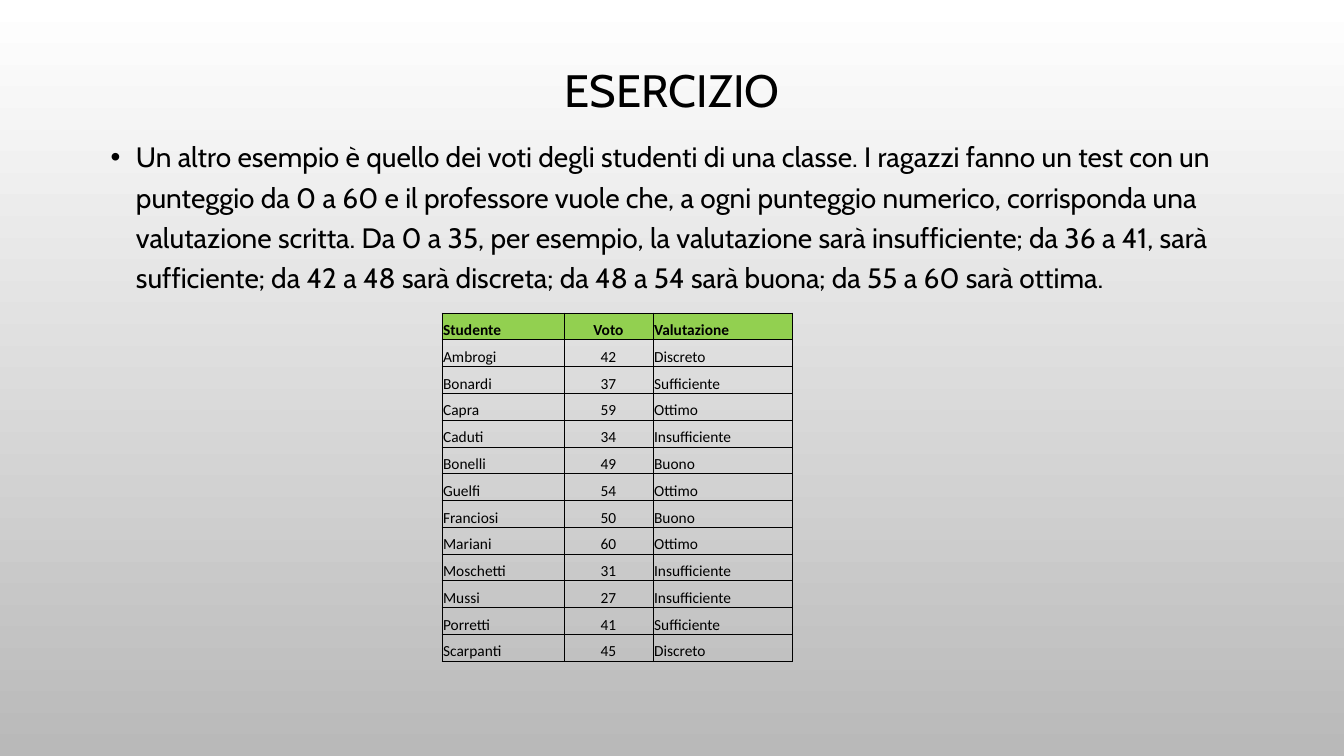
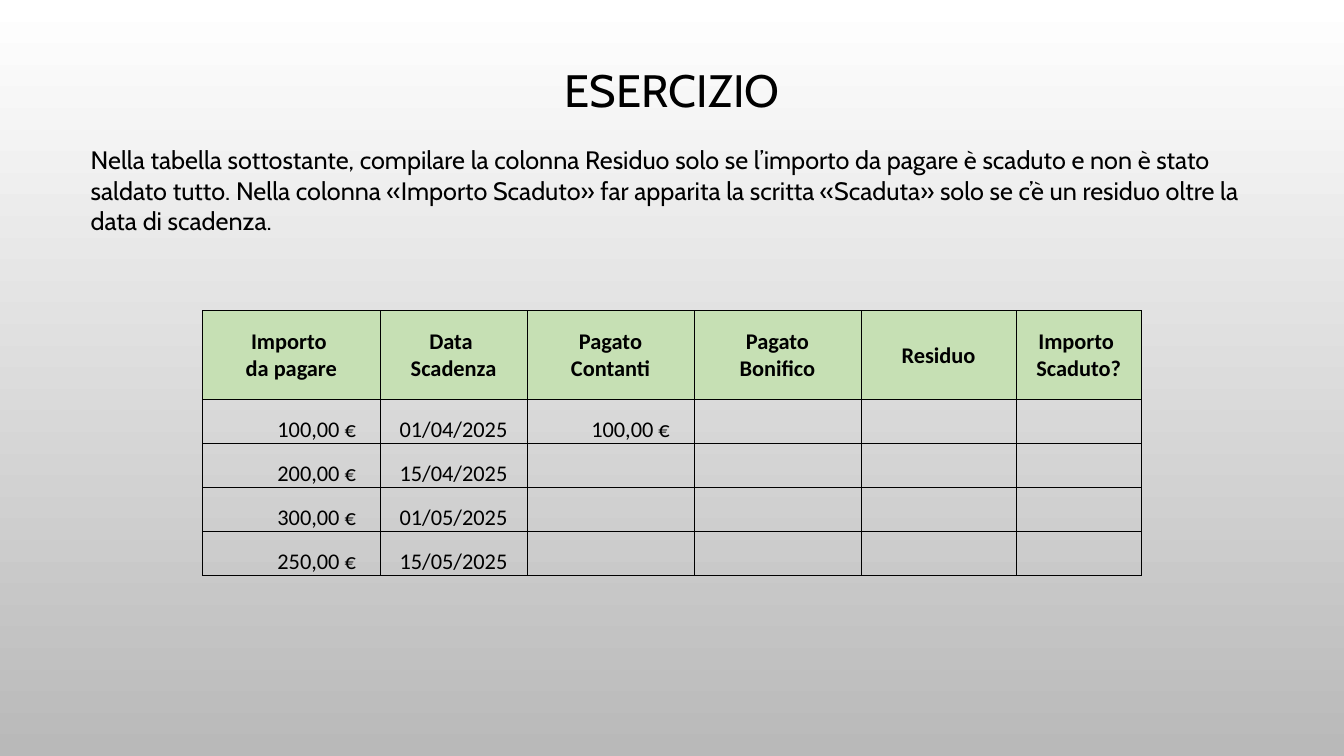
from dataclasses import dataclass

from lxml.etree import SubElement
from pptx import Presentation
from pptx.dml.color import RGBColor
from pptx.enum.text import MSO_ANCHOR as Anchor, PP_ALIGN as Align
from pptx.oxml.ns import qn
from pptx.util import Pt

EMU_PER_PX = 9525


@dataclass(frozen=True)
class Theme:
    text: str = "000000"
    page_top: str = "FFFFFF"
    page_bottom: str = "B9B9B9"
    grades_header: str = "92D050"
    payments_header: str = "C6E0B4"
    text_font: str = "Cabin"
    table_font: str = "Calibri"
    title_size: float = 32.4
    bullet_size: int = 20
    body_size: int = 18
    grades_size: int = 11
    payments_size: int = 16
    border_width: float = 0.5


THEME = Theme()


@dataclass(frozen=True)
class Column:
    width: int
    align: Align = Align.LEFT
    right_inset: int = 1


# Content
BULLET = (
    "Un altro esempio è quello dei voti degli studenti di una classe. "
    "I ragazzi fanno un test con un punteggio da 0 a 60 e il professore vuole che, "
    "a ogni punteggio numerico, corrisponda una valutazione scritta. "
    "Da 0 a 35, per esempio, la valutazione sarà insufficiente; "
    "da 36 a 41, sarà sufficiente; da 42 a 48 sarà discreta; "
    "da 48 a 54 sarà buona; da 55 a 60 sarà ottima."
)
GRADES = [
    ("Studente", "Voto", "Valutazione"),
    ("Ambrogi", "42", "Discreto"),
    ("Bonardi", "37", "Sufficiente"),
    ("Capra", "59", "Ottimo"),
    ("Caduti", "34", "Insufficiente"),
    ("Bonelli", "49", "Buono"),
    ("Guelfi", "54", "Ottimo"),
    ("Franciosi", "50", "Buono"),
    ("Mariani", "60", "Ottimo"),
    ("Moschetti", "31", "Insufficiente"),
    ("Mussi", "27", "Insufficiente"),
    ("Porretti", "41", "Sufficiente"),
    ("Scarpanti", "45", "Discreto"),
]
GRADE_COLUMNS = [Column(116), Column(85, Align.CENTER), Column(133)]

INSTRUCTIONS = (
    "Nella tabella sottostante, compilare la colonna Residuo solo se l’importo "
    "da pagare è scaduto e non è stato saldato tutto. Nella colonna «Importo Scaduto» "
    "far apparita la scritta «Scaduta» solo se c’è un residuo oltre la data di scadenza."
)
PAYMENTS = [
    ("Importo \nda pagare", "Data \nScadenza", "Pagato\nContanti",
     "Pagato\nBonifico", "Residuo", "Importo \nScaduto?"),
    ("100,00 €", "01/04/2025", "100,00 €", "", "", ""),
    ("200,00 €", "15/04/2025", "", "", "", ""),
    ("300,00 €", "01/05/2025", "", "", "", ""),
    ("250,00 €", "15/05/2025", "", "", "", ""),
]
PAYMENT_COLUMNS = [
    Column(169, Align.RIGHT, 23),
    Column(140, Align.CENTER),
    Column(159, Align.RIGHT, 23),
    Column(159, Align.RIGHT, 23),
    Column(148, Align.RIGHT, 23),
    Column(119, Align.CENTER),
]


# Helpers
def px(*lengths):
    return [round(length * EMU_PER_PX) for length in lengths]


def set_font(paragraph, name, size, bold=False):
    font = paragraph.font
    font.name, font.size, font.bold = name, Pt(size), bold
    font.color.rgb = RGBColor.from_string(THEME.text)


def add_bullet(paragraph, indent):
    properties = paragraph._p.get_or_add_pPr()
    properties.set("marL", str(indent))
    properties.set("indent", str(-indent))
    SubElement(properties, qn("a:buFont"), typeface="Arial")
    SubElement(properties, qn("a:buChar"), char="•")


def add_text(slide, box, text, size, align=Align.LEFT, anchor=Anchor.TOP,
             line_spacing=1.0, bullet_indent=0):
    frame = slide.shapes.add_textbox(*px(*box)).text_frame
    frame.word_wrap = True
    frame.vertical_anchor = anchor
    paragraph = frame.paragraphs[0]
    paragraph.text = text
    paragraph.alignment = align
    paragraph.line_spacing = line_spacing
    if bullet_indent:
        add_bullet(paragraph, *px(bullet_indent))
    set_font(paragraph, THEME.text_font, size)


def add_borders(cell):
    properties = cell._tc.get_or_add_tcPr()
    for side in ("lnL", "lnR", "lnT", "lnB"):
        line = SubElement(properties, qn(f"a:{side}"), w=str(Pt(THEME.border_width)))
        fill = SubElement(line, qn("a:solidFill"))
        SubElement(fill, qn("a:srgbClr"), val=THEME.text)


def fill_cell(cell, text, size, align, anchor, right_inset, header_color=None):
    add_borders(cell)
    if header_color:
        cell.fill.solid()
        cell.fill.fore_color.rgb = RGBColor.from_string(header_color)
    else:
        cell.fill.background()
    cell.margin_left, cell.margin_top, cell.margin_right, cell.margin_bottom = px(
        1, 1, right_inset, 0)
    cell.vertical_anchor = anchor
    paragraph = cell.text_frame.paragraphs[0]
    paragraph.text = text
    paragraph.alignment = align
    set_font(paragraph, THEME.table_font, size, bold=bool(header_color))


def add_grid(slide, left, top, height, rows, columns, size, header_color,
             header_units=1, header_align=None, header_anchor=Anchor.BOTTOM):
    """The header row is header_units times as high as each other row."""
    width = sum(column.width for column in columns)
    table = slide.shapes.add_table(
        len(rows), len(columns), *px(left, top, width, height)).table
    table.first_row = table.horz_banding = False
    for grid_column, column in zip(table.columns, columns):
        grid_column.width = px(column.width)[0]

    row_height = height / (len(rows) - 1 + header_units)
    for r, values in enumerate(rows):
        is_header = r == 0
        table.rows[r].height = px(row_height * (header_units if is_header else 1))[0]
        for c, (text, column) in enumerate(zip(values, columns)):
            if is_header:
                fill_cell(table.cell(r, c), text, size, header_align or column.align,
                          header_anchor, 1, header_color)
            else:
                fill_cell(table.cell(r, c), text, size, column.align,
                          Anchor.BOTTOM, column.right_inset)


def set_background(master):
    fill = master.background.fill
    fill.gradient()
    fill.gradient_angle = 270
    for stop, color in zip(fill.gradient_stops, (THEME.page_top, THEME.page_bottom)):
        stop.color.rgb = RGBColor.from_string(color)


def add_exercise(deck):
    slide = deck.slides.add_slide(deck.slide_layouts[6])
    add_text(slide, (96, 65, 1088, 47), "ESERCIZIO", THEME.title_size,
             Align.CENTER, Anchor.MIDDLE, line_spacing=0.9)
    return slide


# Slides
def add_grades_slide(deck):
    slide = add_exercise(deck)
    add_text(slide, (96, 122, 1088, 487), BULLET, THEME.bullet_size,
             line_spacing=1.2, bullet_indent=24)
    add_grid(slide, 421, 298, 332, GRADES, GRADE_COLUMNS,
             THEME.grades_size, THEME.grades_header)


def add_payments_slide(deck):
    slide = add_exercise(deck)
    add_text(slide, (77, 133, 1116, 97), INSTRUCTIONS, THEME.body_size)
    add_grid(slide, 193, 296, 252, PAYMENTS, PAYMENT_COLUMNS,
             THEME.payments_size, THEME.payments_header, header_units=2,
             header_align=Align.CENTER, header_anchor=Anchor.MIDDLE)


def main():
    deck = Presentation()
    deck.slide_width, deck.slide_height = px(1280, 720)
    set_background(deck.slide_master)
    add_grades_slide(deck)
    add_payments_slide(deck)
    deck.save("out.pptx")


if __name__ == "__main__":
    main()
